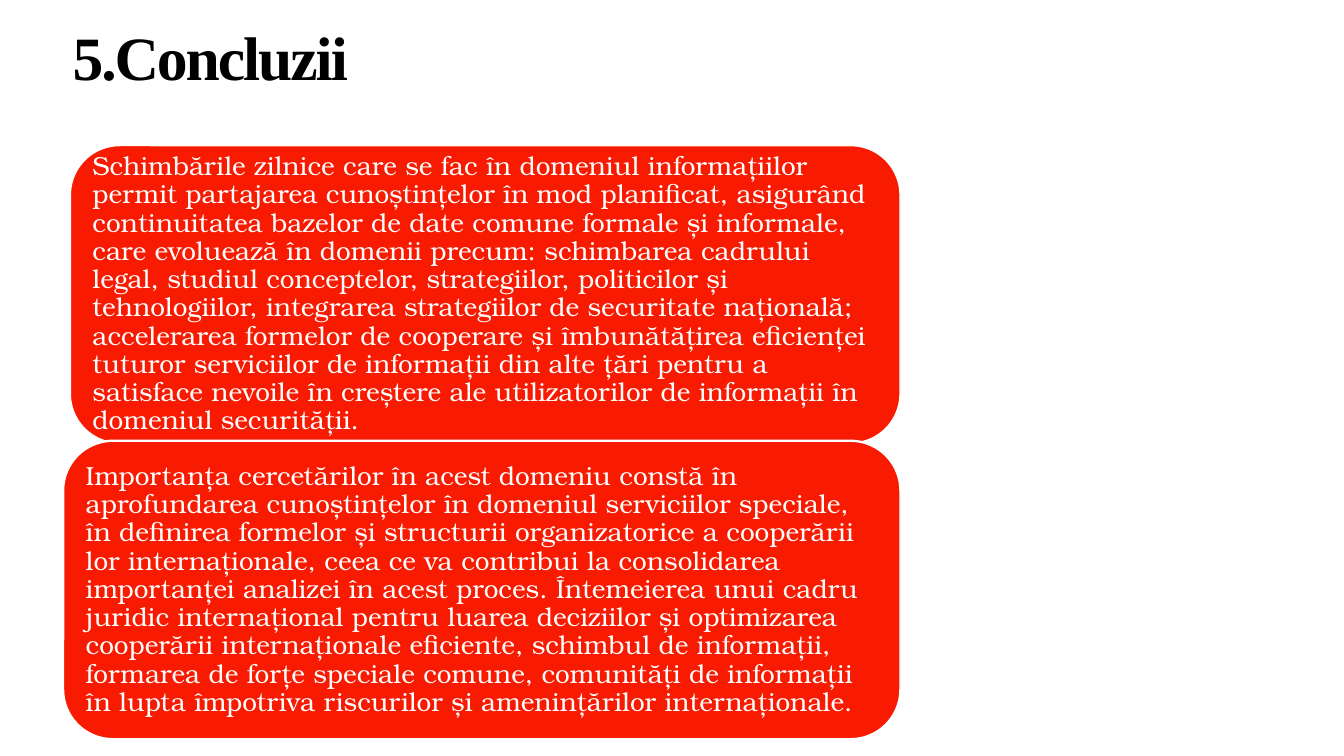
from dataclasses import dataclass

from pptx import Presentation
from pptx.dml.color import RGBColor
from pptx.enum.shapes import MSO_SHAPE
from pptx.enum.text import MSO_ANCHOR, PP_ALIGN
from pptx.util import Inches, Pt

ROUND = MSO_SHAPE.ROUNDED_RECTANGLE
MIDDLE, BOTTOM = MSO_ANCHOR.MIDDLE, MSO_ANCHOR.BOTTOM
LEFT, CENTER = PP_ALIGN.LEFT, PP_ALIGN.CENTER
RED = RGBColor(0xF8, 0x1B, 0x02)
WHITE = RGBColor(0xFF, 0xFF, 0xFF)
BLACK = RGBColor(0, 0, 0)
WIDE = 10
HIGH = WIDE * 9 / 16
RIGHT = 6.7
TOP, STEP, TALL = 1.08, 2.2, 2.22


@dataclass(frozen=True)
class Panel:
    left: float
    text: str


PANELS = [
    Panel(
        0.52,
        "Schimbările zilnice care se fac în domeniul informațiilor permit "
        "partajarea cunoștințelor în mod planificat, asigurând continuitatea "
        "bazelor de date comune formale și informale, care evoluează în domenii "
        "precum: schimbarea cadrului legal, studiul conceptelor, strategiilor, "
        "politicilor și tehnologiilor, integrarea strategiilor de securitate "
        "națională; accelerarea formelor de cooperare și îmbunătățirea eficienței "
        "tuturor serviciilor de informații din alte țări pentru a satisface "
        "nevoile în creștere ale utilizatorilor de informații în domeniul "
        "securității.",
    ),
    Panel(
        0.47,
        "Importanța cercetărilor în acest domeniu constă în aprofundarea "
        "cunoștințelor în domeniul serviciilor speciale, în definirea formelor și "
        "structurii organizatorice a cooperării lor internaționale, ceea ce va "
        "contribui la consolidarea importanței analizei în acest proces. "
        "Întemeierea unui cadru juridic internațional pentru luarea deciziilor și "
        "optimizarea cooperării internaționale eficiente, schimbul de informații, "
        "formarea de forțe speciale comune, comunități de informații în lupta "
        "împotriva riscurilor și amenințărilor internaționale.",
    ),
]


def write(shape, text: str, *, font: str, size: float, color: RGBColor,
          bold: bool = False, align=LEFT, anchor=MIDDLE,
          inset: float = 0.06, lead: float = 1, track: int = 0) -> None:
    frame = shape.text_frame
    frame.word_wrap = True
    frame.vertical_anchor = anchor
    frame.margin_left = frame.margin_right = Inches(inset)
    frame.margin_top = frame.margin_bottom = Inches(inset)
    para = frame.paragraphs[0]
    para.alignment = align
    para.line_spacing = lead
    run = para.add_run()
    run.text = text
    run.font.name = font
    run.font.size = Pt(size)
    run.font.bold = bold
    run.font.color.rgb = color
    if track:
        run.font._element.set("spc", str(track))


def draw(slide, panel: Panel, row: int) -> None:
    shape = slide.shapes.add_shape(
        ROUND, Inches(panel.left), Inches(TOP + row * STEP),
        Inches(RIGHT - panel.left), Inches(TALL))
    shape.shadow.inherit = False
    shape.fill.solid()
    shape.fill.fore_color.rgb = RED
    shape.line.color.rgb = WHITE
    shape.line.width = Pt(1.25)
    write(shape, panel.text, font="TeX Gyre Bonum", size=14,
          color=WHITE, lead=0.9)


def main() -> None:
    deck = Presentation()
    deck.slide_width, deck.slide_height = Inches(WIDE), Inches(HIGH)
    slide = deck.slides.add_slide(deck.slide_layouts[6])
    title = slide.shapes.add_textbox(
        Inches(-0.09), Inches(0.24), Inches(3.31), Inches(0.55))
    write(title, "5.Concluzii", font="Times New Roman", size=33, color=BLACK,
          bold=True, align=CENTER, anchor=BOTTOM, inset=0.1, track=-110)
    for row, panel in enumerate(PANELS):
        draw(slide, panel, row)
    deck.save("out.pptx")


if __name__ == "__main__":
    main()
